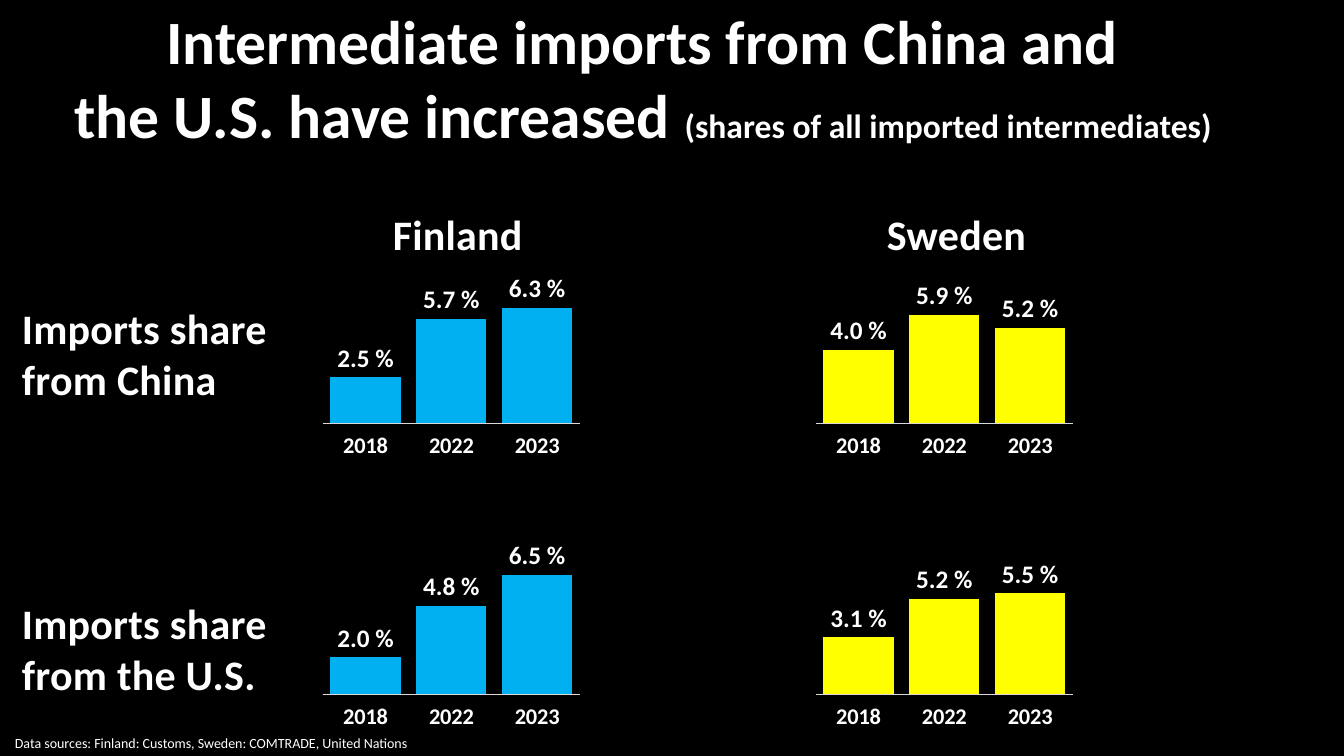
from pptx import Presentation
from pptx.chart.data import CategoryChartData
from pptx.dml.color import RGBColor
from pptx.enum.chart import XL_CHART_TYPE, XL_LABEL_POSITION, XL_TICK_LABEL_POSITION, XL_TICK_MARK
from pptx.enum.text import MSO_AUTO_SIZE, PP_ALIGN
from pptx.oxml import parse_xml
from pptx.oxml.ns import nsdecls, qn
from pptx.util import Emu, Pt

COLUMN = XL_CHART_TYPE.COLUMN_CLUSTERED
OUTSIDE_END = XL_LABEL_POSITION.OUTSIDE_END
LABELS_LOW = XL_TICK_LABEL_POSITION.LOW
NO_TICK = XL_TICK_MARK.NONE
FIT_SHAPE = MSO_AUTO_SIZE.SHAPE_TO_FIT_TEXT
LEFT, CENTER = PP_ALIGN.LEFT, PP_ALIGN.CENTER

BLACK = RGBColor(0x00, 0x00, 0x00)
WHITE = RGBColor(0xFF, 0xFF, 0xFF)
GREY = RGBColor(0xD9, 0xD9, 0xD9)
BLUE = RGBColor(0x00, 0xB0, 0xF0)
YELLOW = RGBColor(0xFF, 0xFF, 0x00)

FONT = "Calibri"
EMU_PER_PX = 914400 / 100.8
YEARS = ("2018", "2022", "2023")
PERCENT = "0.0\\ %"
PLOT_AREA = {"x": 0.19, "y": 0, "w": 0.78, "h": 0.8}

# country, heading left, chart left, bar colour
COUNTRIES = (
    ("Finland", 383, 260, BLUE),
    ("Sweden", 877, 753, YELLOW),
)
# row label, label top, chart top, shares by country
ROWS = (
    ("Imports share from China", 298, 240,
     {"Finland": (0.025, 0.057, 0.063), "Sweden": (0.04, 0.059, 0.052)}),
    ("Imports share from the U.S.", 593, 511,
     {"Finland": (0.02, 0.048, 0.065), "Sweden": (0.031, 0.052, 0.055)}),
)


def px(n):
    return Emu(round(n * EMU_PER_PX))


def box(*lengths):
    return [px(n) for n in lengths]


def style_font(font, size, color=WHITE, bold=True):
    font.name = FONT
    font.size = Pt(size)
    font.bold = bold
    font.color.rgb = color


def add_text(slide, place, paragraphs, align=LEFT, bold=True, wrap=True, after=0, spacing=0):
    """Add a text box; each paragraph is a list of (text, size) runs."""
    tf = slide.shapes.add_textbox(*box(*place)).text_frame
    tf.word_wrap = wrap
    tf.auto_size = FIT_SHAPE
    for i, runs in enumerate(paragraphs):
        p = tf.paragraphs[0] if i == 0 else tf.add_paragraph()
        p.alignment = align
        p.space_after = Pt(after)
        for text, size in runs:
            r = p.add_run()
            r.text = text
            style_font(r.font, size, bold=bold)
            if spacing:
                r.font._element.set("spc", str(spacing))


def add_label(slide, place, text):
    add_text(slide, place, [[(text, 30)]], after=6, spacing=20)


def set_plot_area(chart):
    """Fix the inner plot area as fractions of the chart."""
    plot_area = chart._chartSpace.find(".//" + qn("c:plotArea"))
    for layout in plot_area.findall(qn("c:layout")):
        plot_area.remove(layout)
    modes = "".join(f'<c:{k}Mode val="edge"/>' for k in "xy")
    sizes = "".join(f'<c:{k} val="{v}"/>' for k, v in PLOT_AREA.items())
    plot_area.insert(0, parse_xml(
        f'<c:layout {nsdecls("c")}><c:manualLayout><c:layoutTarget val="inner"/>'
        f'{modes}{sizes}</c:manualLayout></c:layout>'))


def add_share_chart(slide, left, top, shares, color):
    data = CategoryChartData(number_format=PERCENT)
    data.categories = YEARS
    data.add_series("Series 1", shares)
    chart = slide.shapes.add_chart(COLUMN, *box(left, top, 330, 229), data).chart
    chart.has_legend = False
    chart.has_title = False
    style_font(chart.font, 10, BLACK, bold=False)
    set_plot_area(chart)

    years = chart.category_axis
    years.major_tick_mark = years.minor_tick_mark = NO_TICK
    years.tick_label_position = LABELS_LOW
    years.format.line.color.rgb = GREY
    years.format.line.width = Pt(0.75)
    style_font(years.tick_labels.font, 16)

    values = chart.value_axis
    values.minimum_scale, values.maximum_scale = 0, 0.1
    values.has_major_gridlines = False
    values.visible = False

    plot = chart.plots[0]
    plot.gap_width, plot.overlap = 22, -27
    plot.vary_by_categories = False
    series = plot.series[0]
    series.format.fill.solid()
    series.format.fill.fore_color.rgb = color
    labels = series.data_labels
    labels.show_value = True
    labels.position = OUTSIDE_END
    labels.number_format = PERCENT
    labels.number_format_is_linked = False
    style_font(labels.font, 18)


def main():
    prs = Presentation()
    prs.slide_width, prs.slide_height = box(1344, 756)
    slide = prs.slides.add_slide(prs.slide_layouts[6])
    slide.background.fill.solid()
    slide.background.fill.fore_color.rgb = BLACK

    add_text(slide, (31, -2, 1224, 159), [
        [("Intermediate imports from China and", 44)],
        [("the U.S. have increased ", 44), ("(shares of all imported intermediates)", 24)],
    ], align=CENTER)
    for country, heading_left, _, _ in COUNTRIES:
        add_label(slide, (heading_left, 204, 171, 61), country)
    for label, label_top, chart_top, shares in ROWS:
        for country, _, chart_left, color in COUNTRIES:
            add_share_chart(slide, chart_left, chart_top, shares[country], color)
        add_label(slide, (12, label_top, 283, 112), label)
    add_text(slide, (5, 730, 415, 27),
             [[("Data sources: Finland: Customs, Sweden: COMTRADE, United Nations", 10)]],
             bold=False, wrap=False)

    prs.save("out.pptx")


if __name__ == "__main__":
    main()
